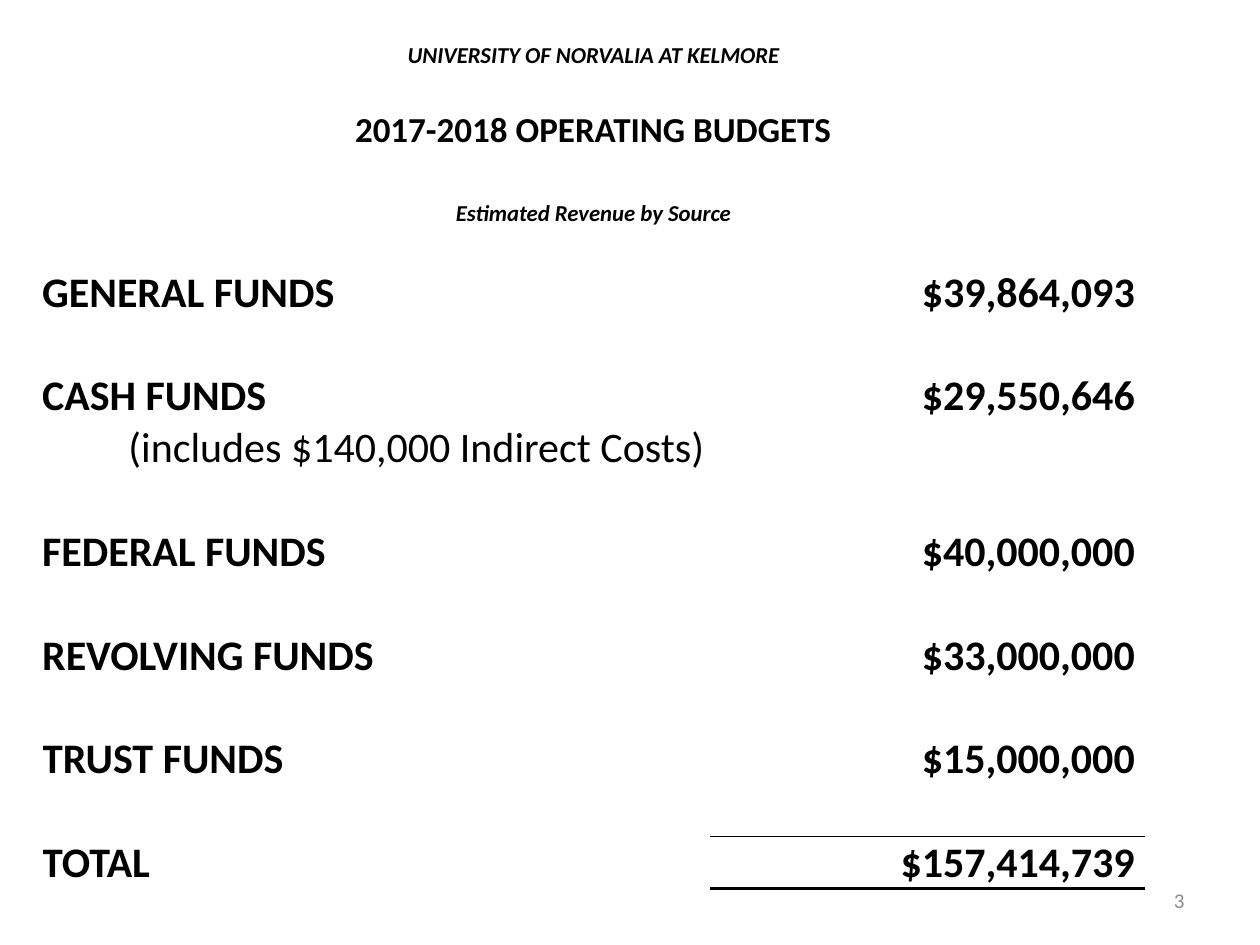
from pptx import Presentation
from pptx.util import Cm, Pt
from pptx.dml.color import RGBColor
from pptx.enum.text import PP_ALIGN, MSO_ANCHOR
from lxml.etree import SubElement
from pptx.oxml.ns import qn

THEME = {
    "face": "Calibri",
    "ink": RGBColor(0, 0, 0),
    "gray": RGBColor(0x8C, 0x8C, 0x8C),
    "small": Pt(13), "title": Pt(20), "body": Pt(24), "page": Pt(12),
    "tiny": 800,
}
BASE = {"name": THEME["face"], "bold": True, "italic": False}


def write(para, text, align, color=THEME["ink"], **style):
    para.alignment = align
    run = para.add_run()
    run.text = text
    for key, value in (BASE | style).items():
        setattr(run.font, key, value)
    run.font.color.rgb = color


def rule(cell, side, width):
    """Draw one border; side is lnT or lnB."""
    props = cell._tc.get_or_add_tcPr()
    line = SubElement(props, qn(f"a:{side}"), w=str(Pt(width)))
    fill = SubElement(line, qn("a:solidFill"))
    SubElement(fill, qn("a:srgbClr"), val=str(THEME["ink"]))


deck = Presentation()
deck.slide_width, deck.slide_height = Cm(25.4), Cm(19.05)
slide = deck.slides.add_slide(deck.slide_layouts[6])

# Page number
box = slide.shapes.add_textbox(Cm(18.2), Cm(17.65), Cm(5.93), Cm(1.01))
frame = box.text_frame
frame.word_wrap = True
frame.vertical_anchor = MSO_ANCHOR.MIDDLE
write(frame.paragraphs[0], "3", PP_ALIGN.RIGHT, THEME["gray"],
      size=THEME["page"], bold=False)

# Budget table
heads = {
    0: ("UNIVERSITY OF NORVALIA AT KELMORE", THEME["small"], True),
    2: ("2017-2018 OPERATING BUDGETS", THEME["title"], False),
    4: ("Estimated Revenue by Source", THEME["small"], True),
}
funds = {
    6: ("GENERAL FUNDS", "$39,864,093"),
    8: ("CASH FUNDS", "$29,550,646"),
    11: ("FEDERAL FUNDS", "$40,000,000"),
    13: ("REVOLVING FUNDS", "$33,000,000"),
    15: ("TRUST FUNDS", "$15,000,000"),
    17: ("TOTAL", "$157,414,739"),
}
note, total = 9, 17
wide = [12.24, 1.24, 4.07, 4.67]
high = [0.76, 0.81, 0.86, 0.76, 0.76, 0.79] + [1.04, 1.05] * 6 + [0.5]
spans = {row: [(0, 3)] for row in heads} | {1: [(1, 3)], 3: [(0, 2)]}

table = slide.shapes.add_table(
    len(high), len(wide), Cm(0.85), Cm(0.64), Cm(sum(wide)), Cm(sum(high))).table
table.first_row = table.horz_banding = False
for col, size in zip(table.columns, wide):
    col.width = Cm(size)
for row, size in zip(table.rows, high):
    row.height = Cm(size)

plain = {"margin_left": 0, "margin_right": 0, "margin_top": 0,
         "margin_bottom": 0, "vertical_anchor": MSO_ANCHOR.BOTTOM}
for cell in table.iter_cells():
    for key, value in plain.items():
        setattr(cell, key, value)

for row in range(len(high)):
    for first, last in spans.get(row, [(0, 1), (2, 3)]):
        table.cell(row, first).merge(table.cell(row, last))

for row, (text, size, slant) in heads.items():
    write(table.cell(row, 0).text_frame.paragraphs[0], text,
          PP_ALIGN.CENTER, size=size, italic=slant)

for row, (fund, amount) in funds.items():
    name, value = table.cell(row, 0), table.cell(row, 2)
    value.margin_right = Cm(0.19)
    write(name.text_frame.paragraphs[0], fund, PP_ALIGN.LEFT, size=THEME["body"])
    write(value.text_frame.paragraphs[0], amount, PP_ALIGN.RIGHT, size=THEME["body"])

para = table.cell(note, 0).text_frame.paragraphs[0]
write(para, "(includes $140,000 Indirect Costs)",
      PP_ALIGN.LEFT, size=THEME["body"], bold=False)
para._p.get_or_add_pPr().set("marL", str(Cm(1.74)))

# Rules around the total, set on both cells that share an edge
edges = [(total - 1, "lnB", 0.5), (total, "lnT", 0.5),
         (total, "lnB", 2), (total + 1, "lnT", 2)]
for row, side, width in edges:
    for col in (2, 3):
        rule(table.cell(row, col), side, width)

# Empty cells take a small size so that they do not stretch their rows
for cell in table.iter_cells():
    cell.fill.background()
    if not cell.text:
        SubElement(cell.text_frame.paragraphs[0]._p, qn("a:endParaRPr"),
                   sz=str(THEME["tiny"]))

deck.save("out.pptx")
